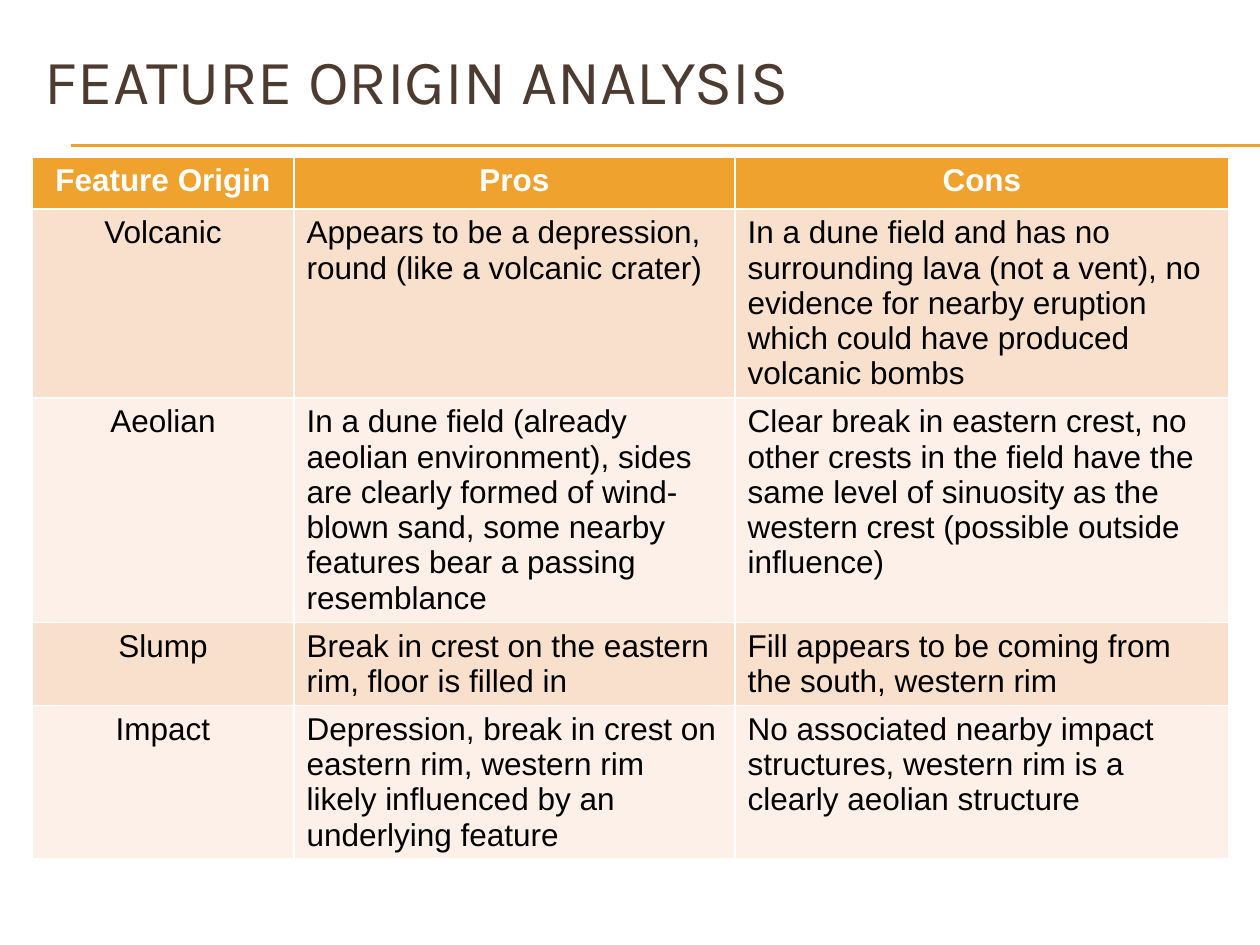
from dataclasses import dataclass

from lxml.etree import SubElement
from pptx import Presentation
from pptx.dml.color import RGBColor
from pptx.enum.shapes import MSO_CONNECTOR
from pptx.enum.text import MSO_ANCHOR, PP_ALIGN
from pptx.oxml.ns import qn
from pptx.slide import Slide
from pptx.util import Emu, Pt

PX_PER_INCH = 126


def px(length: int) -> Emu:
    return Emu(round(length * 914400 / PX_PER_INCH))


@dataclass(frozen=True)
class Theme:
    accent: RGBColor = RGBColor(0xF0, 0xA2, 0x2E)
    title: RGBColor = RGBColor(0x4E, 0x3B, 0x30)
    header_text: RGBColor = RGBColor(0xFF, 0xFF, 0xFF)
    body_text: RGBColor = RGBColor(0, 0, 0)
    bands: tuple = (RGBColor(0xF9, 0xE0, 0xCD), RGBColor(0xFC, 0xF0, 0xE8))
    title_font: str = "Karla"
    table_font: str = "Arial"
    title_size: Pt = Pt(36)
    table_size: Pt = Pt(18)
    rule_width: Pt = Pt(0.75)


@dataclass(frozen=True)
class Origin:
    feature: str
    pros: str
    cons: str


THEME = Theme()
HEADER = Origin("Feature Origin", "Pros", "Cons")
ORIGINS = [
    Origin(
        "Volcanic",
        "Appears to be a depression, round (like a volcanic crater)",
        "In a dune field and has no surrounding lava (not a vent), no evidence "
        "for nearby eruption which could have produced volcanic bombs",
    ),
    Origin(
        "Aeolian",
        "In a dune field (already aeolian environment), sides are clearly formed "
        "of wind-blown sand, some nearby features bear a passing resemblance",
        "Clear break in eastern crest, no other crests in the field have the same "
        "level of sinuosity as the western crest (possible outside influence)",
    ),
    Origin(
        "Slump",
        "Break in crest on the eastern rim, floor is filled in",
        "Fill appears to be coming from the south, western rim",
    ),
    Origin(
        "Impact",
        "Depression, break in crest on eastern rim, western rim likely influenced "
        "by an underlying feature",
        "No associated nearby impact structures, western rim is a clearly "
        "aeolian structure",
    ),
]

SLIDE_WIDTH, SLIDE_HEIGHT = 1260, 945
MARGIN, CONTENT_WIDTH = 32, 1197
RULE_LEFT, RULE_TOPS = 71, (145, 146)
TABLE_TOP, TABLE_HEIGHT, ROW_HEIGHT = 157, 745, 52
COLUMN_WIDTHS = (262, 441, 494)


def draw_rule(slide: Slide, top: int) -> None:
    rule = slide.shapes.add_connector(
        MSO_CONNECTOR.STRAIGHT, px(RULE_LEFT), px(top), px(SLIDE_WIDTH), px(top)
    )
    rule.line.color.rgb = THEME.accent
    rule.line.width = THEME.rule_width
    SubElement(rule._element.spPr, qn("a:effectLst"))


def draw_title(slide: Slide, wording: str) -> None:
    title = slide.shapes.title
    title.left, title.top = px(MARGIN), px(21)
    title.width, title.height = px(CONTENT_WIDTH), px(116)
    title.text_frame.text = wording
    title.text_frame.vertical_anchor = MSO_ANCHOR.MIDDLE
    heading = title.text_frame.paragraphs[0]
    heading.alignment = PP_ALIGN.LEFT
    font = heading.runs[0].font
    font.name, font.size = THEME.title_font, THEME.title_size
    font.color.rgb = THEME.title


def draw_origins(slide: Slide, entries: list[Origin]) -> None:
    # The default table style supplies the white cell borders
    frame = slide.shapes.add_table(
        len(entries), len(COLUMN_WIDTHS),
        px(MARGIN), px(TABLE_TOP), px(CONTENT_WIDTH), px(TABLE_HEIGHT),
    )
    table = frame.table
    for column, width in zip(table.columns, COLUMN_WIDTHS):
        column.width = px(width)
    for row_index, entry in enumerate(entries):
        table.rows[row_index].height = px(ROW_HEIGHT)
        is_header = row_index == 0
        band = THEME.accent if is_header else THEME.bands[(row_index - 1) % 2]
        for column_index, wording in enumerate((entry.feature, entry.pros, entry.cons)):
            cell = table.cell(row_index, column_index)
            cell.fill.solid()
            cell.fill.fore_color.rgb = band
            cell.text_frame.text = wording
            paragraph = cell.text_frame.paragraphs[0]
            centred = is_header or column_index == 0
            paragraph.alignment = PP_ALIGN.CENTER if centred else PP_ALIGN.LEFT
            font = paragraph.runs[0].font
            font.name, font.size, font.bold = THEME.table_font, THEME.table_size, is_header
            font.color.rgb = THEME.header_text if is_header else THEME.body_text
    # Rows start at one line and grow with their text inside the frame
    frame.height = px(TABLE_HEIGHT)


def main() -> None:
    deck = Presentation()
    deck.slide_width, deck.slide_height = px(SLIDE_WIDTH), px(SLIDE_HEIGHT)
    slide = deck.slides.add_slide(deck.slide_layouts[5])

    # Heading with its double rule
    for top in RULE_TOPS:
        draw_rule(slide, top)
    draw_title(slide, "FEATURE ORIGIN ANALYSIS")

    # Comparison table
    draw_origins(slide, [HEADER, *ORIGINS])

    deck.save("out.pptx")


if __name__ == "__main__":
    main()
